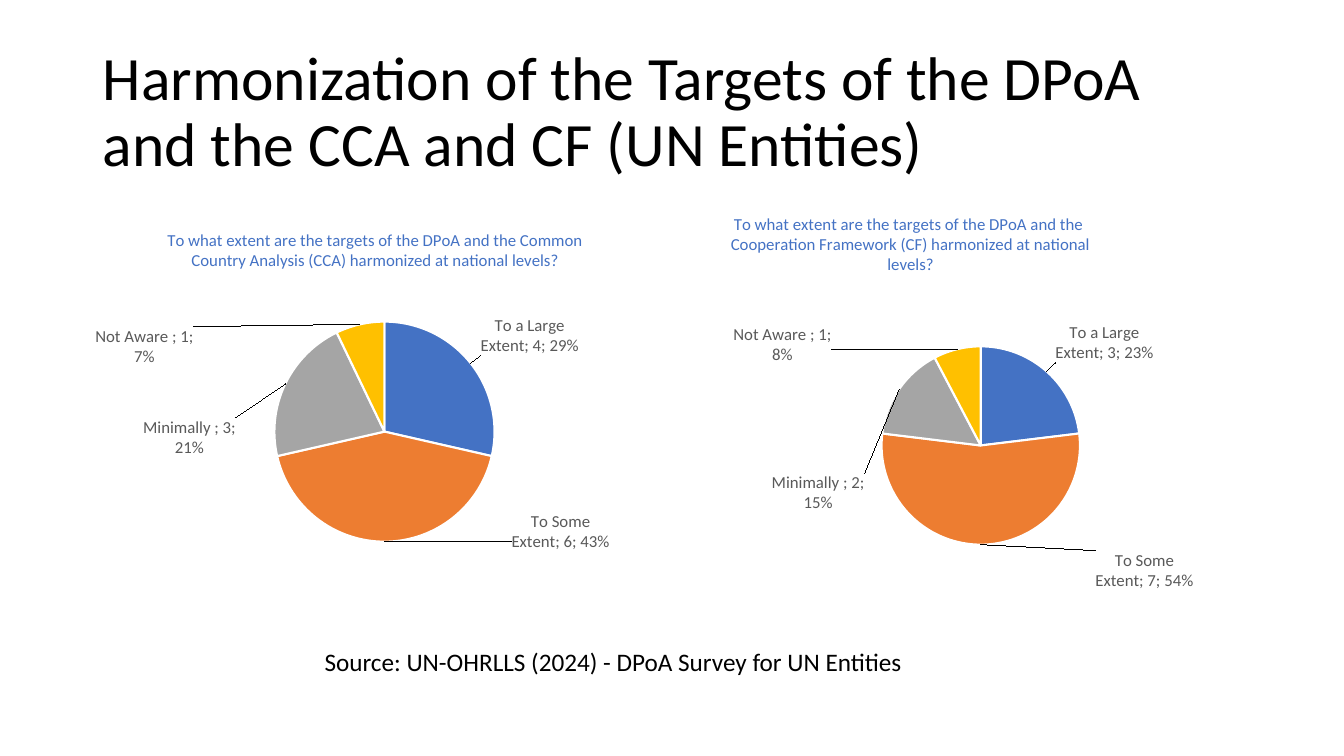
from lxml import etree
from pptx import Presentation
from pptx import util as u
from pptx.chart import data as chart_data
from pptx.dml import color
from pptx.enum import chart as charts, text
from pptx.oxml import ns

FONT = "Calibri"
ANSWERS = ["To a Large Extent", "To Some Extent", "Minimally ", "Not Aware "]
SLICE_COLOURS = ["4472C4", "ED7D31", "A5A5A5", "FFC000"]

# Layout values are fractions of the chart's width and height
CCA_PIE = dict(
    question="To what extent are the targets of the DPoA and the Common Country "
             "Analysis (CCA) harmonized at national levels?",
    counts=[4, 6, 3, 1],
    frame=(0.92, 2, 5.46, 3.97),
    title_at=(0.13, 0.06),
    pie_at=(0.33, 0.3, 0.4, 0.55),
    label_shifts=[(0.01, -0.01), (0.32, -0.09), (-0.08, 0.19), (-0.3, 0.12)],
)
CF_PIE = dict(
    question="To what extent are the targets of the DPoA and the\u00a0 Cooperation "
             "Framework (CF) harmonized at national levels?",
    counts=[3, 7, 2, 1],
    frame=(7.12, 2, 4.92, 4.21),
    title_at=(0.02, 0.02),
    pie_at=(0.33, 0.34, 0.4, 0.47),
    label_shifts=[(0.01, -0.01), (0.33, 0), (-0.06, 0.3), (-0.25, 0.05)],
)


def rgb(colour):
    return color.RGBColor.from_string(colour)


def style_font(font, size, colour):
    font.name = FONT
    font.size = u.Pt(size)
    font.bold = False
    font.color.rgb = rgb(colour)


def place(shape, left, top, width, height):
    shape.left, shape.top = u.Inches(left), u.Inches(top)
    shape.width, shape.height = u.Inches(width), u.Inches(height)


def write(frame, words, size, colour="000000", align=text.PP_ALIGN.LEFT, spacing=None):
    frame.word_wrap = True
    para = frame.paragraphs[0]
    para.alignment = align
    para.line_spacing = spacing
    span = para.add_run()
    span.text = words
    style_font(span.font, size, colour)


def set_layout(parent, index, values, modes=(), target=None):
    """Give a chart part a manual layout as its child number index."""
    for old in parent.findall(ns.qn("c:layout")):
        parent.remove(old)
    layout = etree.Element(ns.qn("c:layout"))
    manual = etree.SubElement(layout, ns.qn("c:manualLayout"))
    if target:
        etree.SubElement(manual, ns.qn("c:layoutTarget"), val=target)
    for mode in modes:
        etree.SubElement(manual, ns.qn(f"c:{mode}"), val="edge")
    for name, value in zip("xywh", values):
        etree.SubElement(manual, ns.qn(f"c:{name}"), val=str(value))
    parent.insert(index, layout)


def label_slice(point, label_xml, shift):
    """Show answer, count and percentage, moved from the default place."""
    for name in ("showCatName", "showVal", "showPercent"):
        label_xml.find(ns.qn(f"c:{name}")).set("val", "1")
    separator = etree.SubElement(label_xml, ns.qn("c:separator"))
    separator.text = "; "
    set_layout(label_xml, 1, shift)
    style_font(point.data_label.font, 12, "595959")


def add_pie(page, question, counts, frame, title_at, pie_at, label_shifts):
    values = chart_data.CategoryChartData()
    values.categories = ANSWERS
    values.add_series("Series 1", counts)
    chart = page.shapes.add_chart(
        charts.XL_CHART_TYPE.PIE, *map(u.Inches, frame), values).chart
    style_font(chart.font, 10, "000000")
    chart.has_legend = False
    chart.plots[0].vary_by_categories = True

    # Question above the pie
    chart.has_title = True
    write(chart.chart_title.text_frame, question, 12, "4472C4", text.PP_ALIGN.CENTER)
    chart_xml = chart.element.find(ns.qn("c:chart"))
    edges = ("xMode", "yMode")
    set_layout(chart_xml.find(ns.qn("c:title")), 1, title_at, edges)
    set_layout(chart_xml.find(ns.qn("c:plotArea")), 0, pie_at, edges, "inner")

    # Slices and their labels
    series = chart.plots[0].series[0]
    for index, (colour, shift) in enumerate(zip(SLICE_COLOURS, label_shifts)):
        point = series.points[index]
        point.format.fill.solid()
        point.format.fill.fore_color.rgb = rgb(colour)
        point.format.line.color.rgb = rgb("FFFFFF")
        point.format.line.width = u.Pt(1.5)
        point.data_label.position = charts.XL_LABEL_POSITION.OUTSIDE_END
        label_xml = chart_xml.findall(f".//{ns.qn('c:dLbl')}")[index]
        label_slice(point, label_xml, shift)


def add_title(page, words):
    title = page.shapes.title
    place(title, 0.92, 0.4, 11.5, 1.45)
    title.text_frame.auto_size = text.MSO_AUTO_SIZE.NONE
    title.text_frame.vertical_anchor = text.MSO_ANCHOR.MIDDLE
    write(title.text_frame, words, 44, spacing=0.9)


def add_source(page, words):
    box = page.shapes.add_textbox(*map(u.Inches, (3.12, 6.36, 6.11, 0.4)))
    write(box.text_frame, words, 18)


def main():
    deck = Presentation()
    deck.slide_width, deck.slide_height = u.Inches(13.33), u.Inches(7.5)
    page = deck.slides.add_slide(deck.slide_layouts.get_by_name("Title Only"))
    add_title(page, "Harmonization of the Targets of the DPoA and the CCA and CF (UN Entities)")
    for pie in (CCA_PIE, CF_PIE):
        add_pie(page, **pie)
    add_source(page, "Source: UN-OHRLLS (2024) - DPoA Survey for UN Entities")
    deck.save("out.pptx")


if __name__ == "__main__":
    main()
